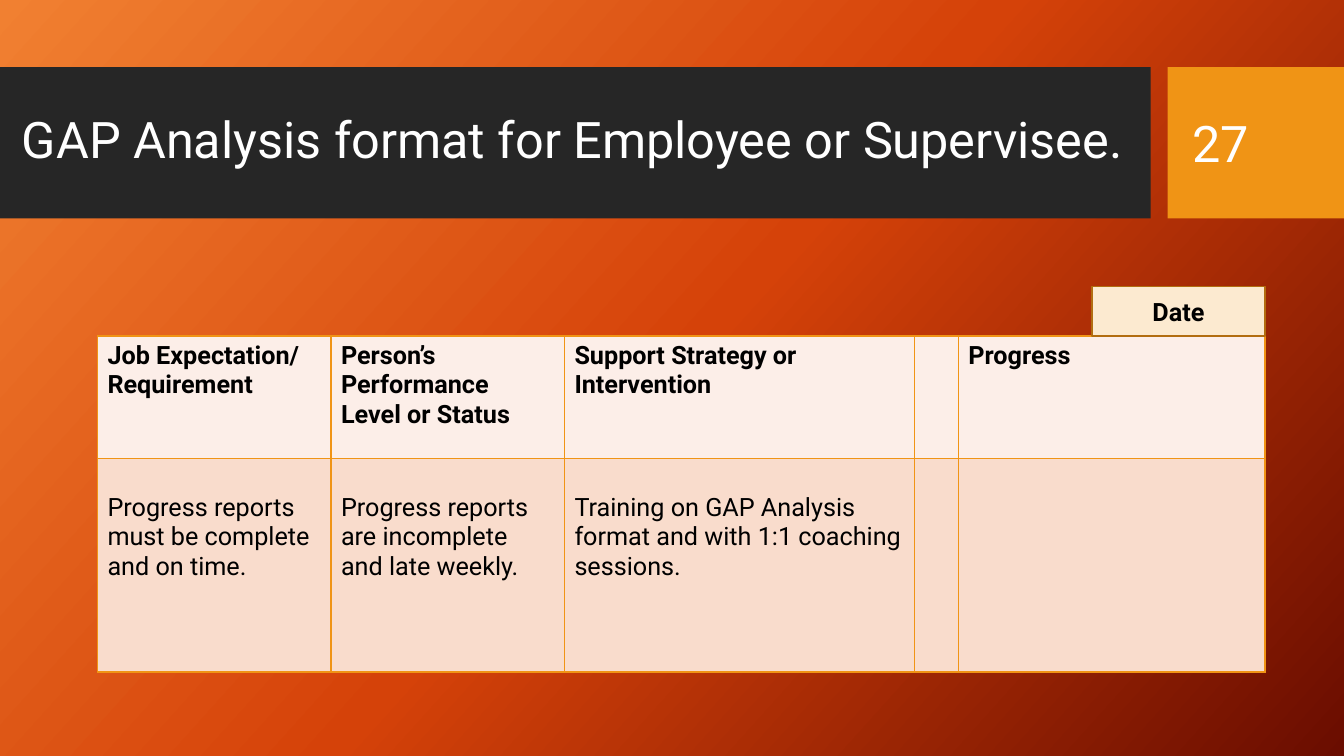
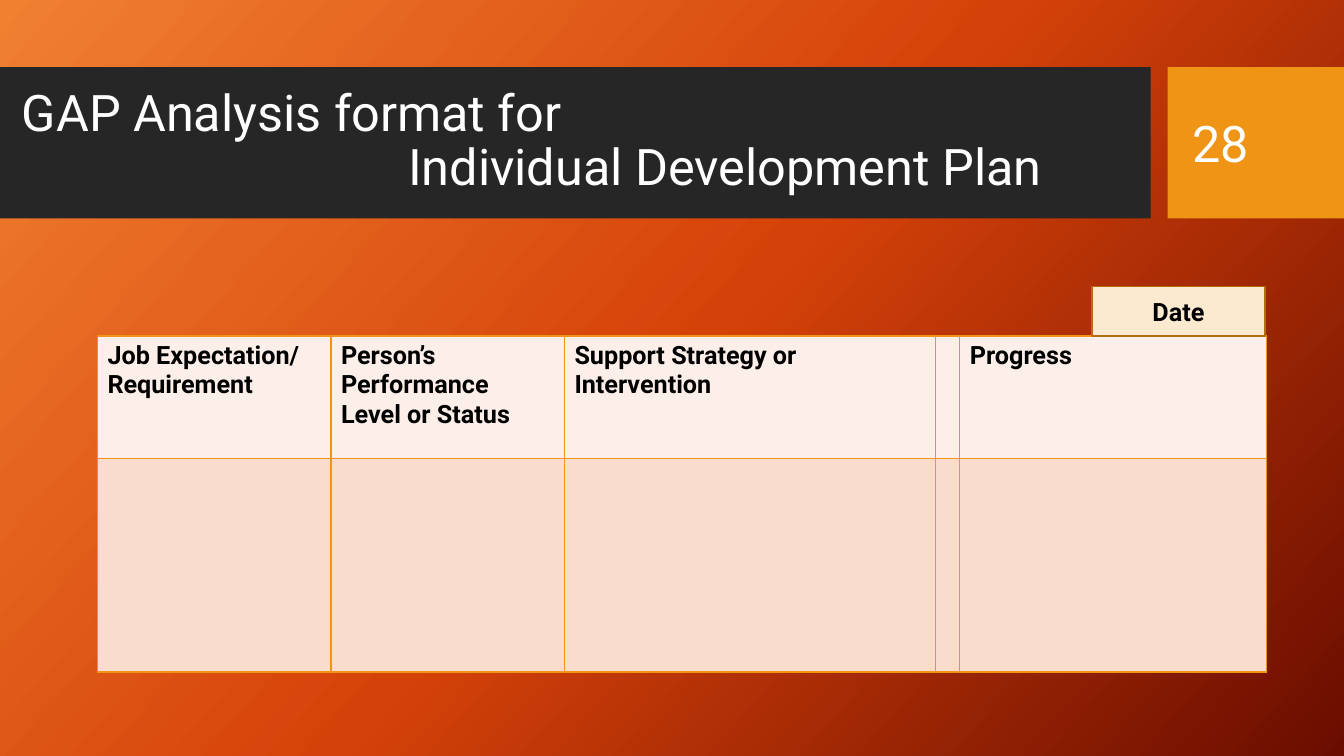
"""Build two GAP analysis slides, each with a title band, a number block and a table."""
from lxml import etree
from pptx import Presentation
from pptx.dml.color import RGBColor
from pptx.enum.shapes import MSO_SHAPE
from pptx.enum.text import MSO_ANCHOR, MSO_AUTO_SIZE, PP_ALIGN
from pptx.oxml.ns import qn
from pptx.util import Inches, Pt

RECTANGLE = MSO_SHAPE.RECTANGLE
MIDDLE = MSO_ANCHOR.MIDDLE
LEFT, CENTER = PP_ALIGN.LEFT, PP_ALIGN.CENTER
NO_AUTOFIT = MSO_AUTO_SIZE.NONE

WHITE = RGBColor(0xFF, 0xFF, 0xFF)
BLACK = RGBColor(0x00, 0x00, 0x00)
CHARCOAL = RGBColor(0x26, 0x26, 0x26)
AMBER = RGBColor(0xF0, 0x94, 0x15)
BROWN = RGBColor(0xB2, 0x6D, 0x10)
CREAM = RGBColor(0xFC, 0xEA, 0xD0)
HEADER_TINT = RGBColor(0xFC, 0xEE, 0xE8)
BODY_TINT = RGBColor(0xF9, 0xDC, 0xCC)
GRADIENT = [
    (0, RGBColor(0xF1, 0x80, 0x31)),
    (50, RGBColor(0xD5, 0x42, 0x09)),
    (100, RGBColor(0x6A, 0x0D, 0x00)),
]
GRADIENT_ANGLE = 42

FONT = "Roboto"
TITLE_SIZE, TEXT_SIZE = 36, 18
GRID_COLUMNS, GRID_ROWS = 160, 90
BAND_TOP, BAND_HEIGHT = 8, 18
TABLE_LEFT, TABLE_TOP = 11.6, 40
ROW_HEIGHTS = [14.6, 25.4]
BODY_MARGIN_TOP = 4.1

HEADERS = [
    "Job Expectation/\nRequirement",
    "Person’s Performance Level or Status",
    "Support Strategy or Intervention",
    "",
    "Progress",
]
FIRST_NUMBER = 27
SLIDES = [
    {
        "title": [("GAP Analysis format for Employee or Supervisee.", 0)],
        "widths": [27.8, 27.8, 41.7, 5.2, 36.5],
        "body": [
            "Progress reports must be complete and on time.",
            "Progress reports are incomplete and late weekly.",
            "Training on GAP Analysis format and with 1:1 coaching sessions.",
            "",
            "",
        ],
    },
    {
        "title": [("GAP Analysis format for", 0), ("Individual Development Plan", 46)],
        "widths": [27.8, 27.8, 44.2, 2.8, 36.5],
        "body": [""] * len(HEADERS),
    },
]


def cells(count):
    """Turn a number of grid cells into a length."""
    return Inches(count / 12)


class Deck:
    """Hold the shared style and the current slide."""

    def __init__(self):
        """Set the slide size and the shared background."""
        self.presentation = Presentation()
        self.presentation.slide_width = cells(GRID_COLUMNS)
        self.presentation.slide_height = cells(GRID_ROWS)
        self.slide = None
        fill = self.presentation.slide_master.background.fill
        fill.gradient()
        gradient = self.presentation.slide_master.element.find(".//" + qn("a:gradFill"))
        stops = gradient.find(qn("a:gsLst"))
        for stop in list(stops):
            stops.remove(stop)
        for percent, color in GRADIENT:
            stop = etree.SubElement(stops, qn("a:gs"), pos=str(percent * 1000))
            etree.SubElement(stop, qn("a:srgbClr"), val=str(color))
        direction = gradient.find(qn("a:lin"))
        direction.set("ang", str(GRADIENT_ANGLE * 60000))
        direction.set("scaled", "0")

    def add_slide(self):
        """Start a slide with the title-only layout."""
        self.slide = self.presentation.slides.add_slide(self.presentation.slide_layouts[5])

    def set_text(self, frame, text, size, color, bold=False, align=LEFT):
        """Fill a text frame, one paragraph a line."""
        frame.word_wrap = True
        frame.text = text
        for paragraph in frame.paragraphs:
            paragraph.alignment = align
            font = paragraph.font
            font.name, font.size, font.bold = FONT, Pt(size), bold
            font.color.rgb = color

    def box(self, left, top, width, height, fill, line=None):
        """Add a filled rectangle."""
        shape = self.slide.shapes.add_shape(
            RECTANGLE, cells(left), cells(top), cells(width), cells(height))
        shape.shadow.inherit = False
        shape.fill.solid()
        shape.fill.fore_color.rgb = fill
        if line is None:
            shape.line.fill.background()
        else:
            shape.line.color.rgb = line
            shape.line.width = Pt(1)
        return shape

    def title(self, lines):
        """Place the title over its band, with an indent for each line."""
        self.box(0, BAND_TOP, 137, BAND_HEIGHT, CHARCOAL)
        title = self.slide.shapes.title
        title.left, title.top = cells(1.4), cells(9.8)
        title.width, title.height = cells(135.2), cells(14.2)
        self.slide.shapes.element.append(title.element)
        frame = title.text_frame
        self.set_text(frame, "\n".join(text for text, _ in lines), TITLE_SIZE, WHITE)
        frame.vertical_anchor = MIDDLE
        frame.auto_size = NO_AUTOFIT
        for paragraph, (_, indent) in zip(frame.paragraphs, lines):
            paragraph.line_spacing = 0.9
            paragraph.space_before = Pt(0)
            paragraph._p.get_or_add_pPr().set("marL", str(cells(indent)))

    def number(self, value):
        """Add the number block at the right edge."""
        self.box(139, BAND_TOP, 21, BAND_HEIGHT, AMBER)
        text_box = self.slide.shapes.add_textbox(
            cells(140.8), cells(9.8), cells(15.1), cells(14.3))
        self.set_text(text_box.text_frame, str(value), TITLE_SIZE, WHITE)
        text_box.text_frame.vertical_anchor = MIDDLE

    def label(self, text):
        """Add the framed label above the last table column."""
        shape = self.box(130, 34.1, 20.6, 5.9, CREAM, BROWN)
        self.set_text(shape.text_frame, text, TEXT_SIZE, BLACK, True, CENTER)
        shape.text_frame.vertical_anchor = MIDDLE

    def style_cell(self, cell, fill):
        """Give a table cell its borders and fill."""
        properties = cell._tc.get_or_add_tcPr()
        for side in ("a:lnL", "a:lnR", "a:lnT", "a:lnB"):
            border = etree.SubElement(properties, qn(side), w=str(Pt(1)))
            solid = etree.SubElement(border, qn("a:solidFill"))
            etree.SubElement(solid, qn("a:srgbClr"), val=str(AMBER))
        cell.fill.solid()
        cell.fill.fore_color.rgb = fill

    def table(self, widths, body):
        """Add the table with a header row and a body row."""
        table = self.slide.shapes.add_table(
            len(ROW_HEIGHTS), len(widths), cells(TABLE_LEFT), cells(TABLE_TOP),
            cells(sum(widths)), cells(sum(ROW_HEIGHTS))).table
        table.first_row = table.horz_banding = False
        for column, width in zip(table.columns, widths):
            column.width = cells(width)
        for row, height in zip(table.rows, ROW_HEIGHTS):
            row.height = cells(height)
        for row_index, texts in enumerate([HEADERS, body]):
            header = row_index == 0
            for column_index, text in enumerate(texts):
                cell = table.cell(row_index, column_index)
                self.style_cell(cell, HEADER_TINT if header else BODY_TINT)
                self.set_text(cell.text_frame, text, TEXT_SIZE, BLACK, header)
                if not header:
                    cell.margin_top = cells(BODY_MARGIN_TOP)


def main():
    """Build the slides and save them."""
    deck = Deck()
    for number, content in enumerate(SLIDES, FIRST_NUMBER):
        deck.add_slide()
        deck.title(content["title"])
        deck.table(content["widths"], content["body"])
        deck.number(number)
        deck.label("Date")
    deck.presentation.save("out.pptx")


if __name__ == "__main__":
    main()
